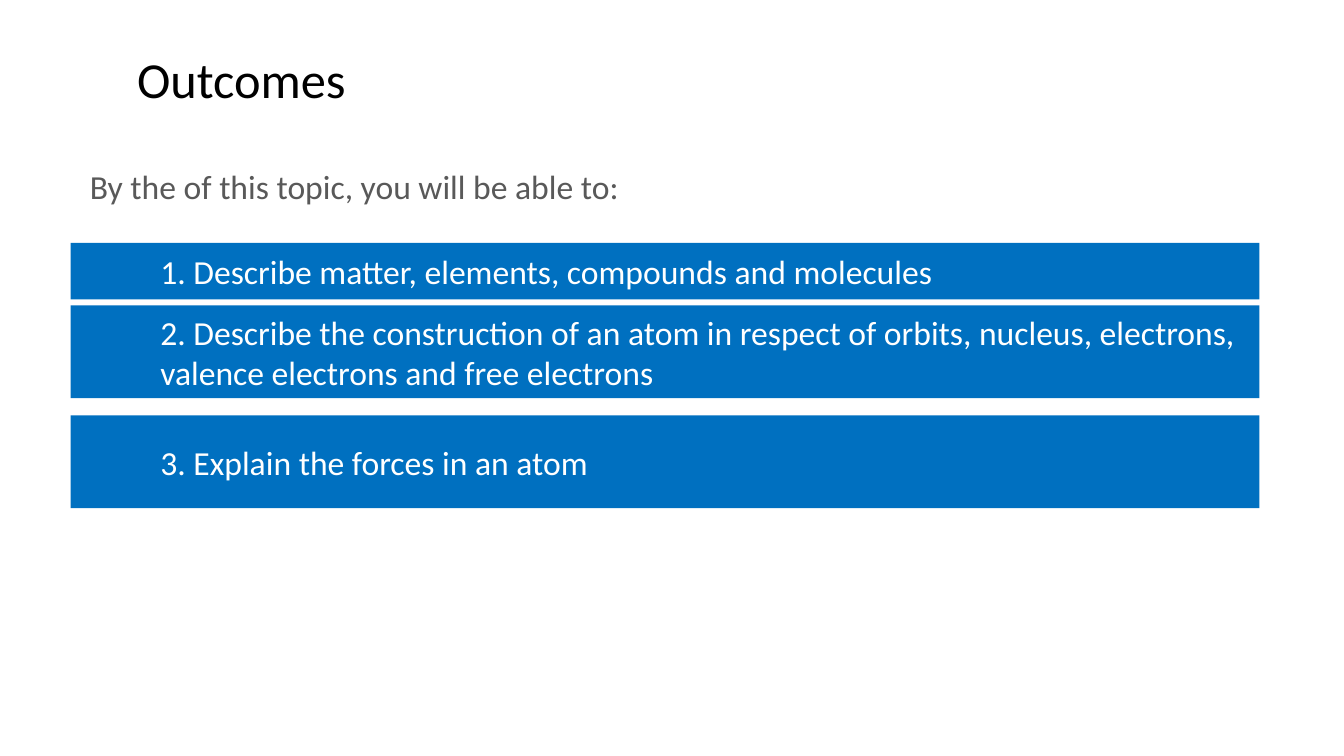
from dataclasses import dataclass

from pptx import Presentation
from pptx.dml.color import RGBColor
from pptx.enum.shapes import MSO_SHAPE
from pptx.enum.text import MSO_ANCHOR, MSO_AUTO_SIZE, PP_ALIGN
from pptx.oxml.ns import qn
from pptx.util import Inches, Pt

TITLE = "Outcomes"
INTRO = "By the of this topic, you will be able to:"
# Text, top and height of each bar
GOALS = [
    ("Describe matter, elements, compounds and molecules", 2.41, 0.56),
    ("Describe the construction of an atom in respect of orbits, nucleus, "
     "electrons, valence electrons and free electrons", 3.03, 0.92),
    ("Explain the forces in an atom", 4.12, 0.92),
]
BAR_LEFT, BAR_WIDTH = 0.7, 11.79


@dataclass(frozen=True)
class Theme:
    font: str = "Calibri"
    head: int = 36
    text: int = 24
    black: str = "000000"
    grey: str = "595959"
    white: str = "FFFFFF"
    blue: str = "0070C0"


THEME = Theme()


def write(shape, text, size, color, anchor):
    frame = shape.text_frame
    frame.text = text
    frame.word_wrap = True
    frame.auto_size = MSO_AUTO_SIZE.NONE
    frame.vertical_anchor = anchor
    para = frame.paragraphs[0]
    para.alignment = PP_ALIGN.LEFT
    font = para.runs[0].font
    font.name, font.size = THEME.font, Pt(size)
    font.color.rgb = RGBColor.from_string(color)
    return para


def place(shape, left, top, width, height):
    shape.left, shape.top = Inches(left), Inches(top)
    shape.width, shape.height = Inches(width), Inches(height)


def add_title(slide):
    title = slide.shapes.title
    place(title, 1.26, 0.29, 8.33, 1.05)
    para = write(title, TITLE, THEME.head, THEME.black, MSO_ANCHOR.MIDDLE)
    para.line_spacing = 0.9


def add_intro(slide):
    body = slide.placeholders[1]
    place(body, 0.79, 1.64, 10.42, 5.86)
    para = write(body, INTRO, THEME.text, THEME.grey, MSO_ANCHOR.TOP)
    para.line_spacing = 0.9
    para.space_before = Pt(10)
    props = para._p.get_or_add_pPr()
    props.set("marL", "0")
    props.set("indent", "0")
    props.append(props.makeelement(qn("a:buNone"), {}))


def add_bar(slide, text, top, height):
    bar = slide.shapes.add_shape(
        MSO_SHAPE.RECTANGLE, Inches(BAR_LEFT), Inches(top),
        Inches(BAR_WIDTH), Inches(height))
    bar.shadow.inherit = False
    bar.fill.solid()
    bar.fill.fore_color.rgb = RGBColor.from_string(THEME.blue)
    bar.line.fill.background()
    write(bar, text, THEME.text, THEME.white, MSO_ANCHOR.MIDDLE)
    frame = bar.text_frame
    frame.margin_left, frame.margin_right = Inches(0.89), Inches(0.13)
    frame.margin_top = frame.margin_bottom = Inches(0.06)


def main():
    deck = Presentation()
    deck.slide_width, deck.slide_height = Inches(13.33), Inches(7.5)
    slide = deck.slides.add_slide(deck.slide_layouts[1])
    add_title(slide)
    add_intro(slide)
    for count, (text, top, height) in enumerate(GOALS, 1):
        add_bar(slide, f"{count}. {text}", top, height)
    deck.save("out.pptx")


if __name__ == "__main__":
    main()
